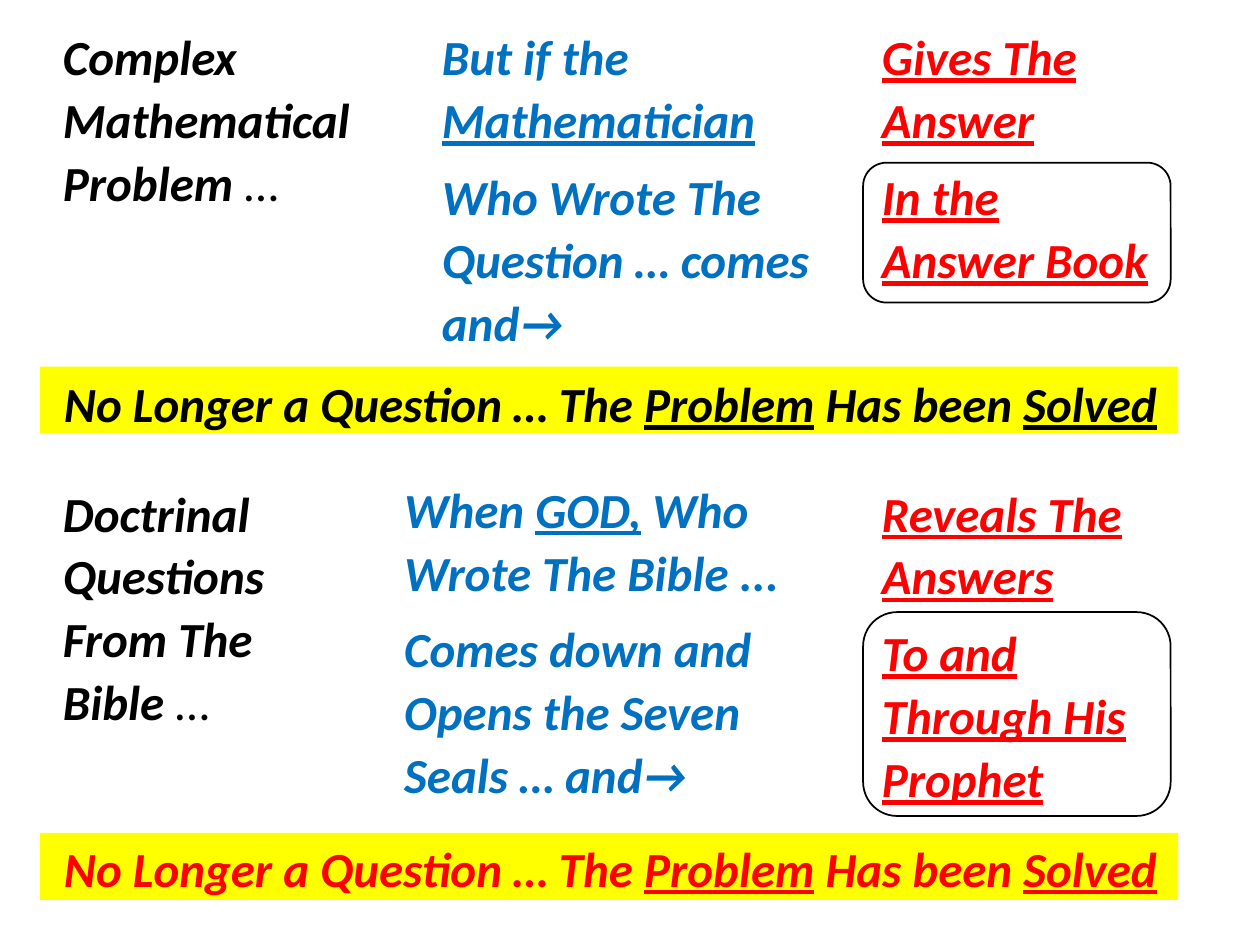
from pptx import Presentation
from pptx.dml.color import RGBColor
from pptx.enum import shapes, text
from pptx.util import Cm, Pt

BLACK = RGBColor(0, 0, 0)
RED = RGBColor(255, 0, 0)
BLUE = RGBColor(0, 112, 192)
YELLOW = RGBColor(255, 255, 0)

PLAIN, UNDERLINED, LIGHT = "plain", "underlined", "light"
SOLVED = [[("No Longer a Question … The ", PLAIN), ("Problem", UNDERLINED),
           (" Has been ", PLAIN), ("Solved", UNDERLINED)]]

BANNERS = [(7.39, 7.32, BLACK), (16.79, 16.69, RED)]
FRAMES = [(3.28, 2.82), (12.34, 4.11)]
PASSAGES = [
    ((1.02, 0.33, 6.58, 4.09), BLACK,
     [[("Complex Mathematical Problem ", PLAIN), ("…", LIGHT)]]),
    ((8.66, 0.33, 8.15, 6.93), BLUE,
     [[("But if the ", PLAIN), ("Mathematician", UNDERLINED)],
      [("Who Wrote The Question … comes and→", PLAIN)]]),
    ((17.53, 0.33, 6.12, 5.66), RED,
     [[("Gives The Answer", UNDERLINED)], [("In the Answer Book", UNDERLINED)]]),
    ((1.02, 9.53, 6.12, 5.38), BLACK,
     [[("Doctrinal Questions From The Bible ", PLAIN), ("…", LIGHT)]]),
    ((7.9, 9.45, 8.86, 6.93), BLUE,
     [[("When ", PLAIN), ("GOD,", UNDERLINED), (" Who Wrote The Bible ...", PLAIN)],
      [("Comes down and Opens the Seven Seals … and→", PLAIN)]]),
    ((17.53, 9.53, 6.12, 6.93), RED,
     [[("Reveals The Answers", UNDERLINED)],
      [("To and Through His Prophet", UNDERLINED)]]),
]


def add_block(page, kind, place):
    block = page.shapes.add_shape(kind, *map(Cm, place))
    block.shadow.inherit = False
    return block


def add_passage(page, place, color, paragraphs):
    box = page.shapes.add_textbox(*map(Cm, place))
    frame = box.text_frame
    frame.word_wrap = True
    frame.auto_size = text.MSO_AUTO_SIZE.SHAPE_TO_FIT_TEXT
    for index, spans in enumerate(paragraphs):
        para = frame.add_paragraph() if index else frame.paragraphs[0]
        para.line_spacing = 1.07
        para.space_after = Pt(8)
        para.font.name = "Calibri"
        para.font.size = Pt(28)
        para.font.color.rgb = color
        for words, style in spans:
            span = para.add_run()
            span.text = words
            span.font.name = "Calibri"
            span.font.size = Pt(28)
            span.font.color.rgb = color
            span.font.bold = span.font.italic = style != LIGHT
            span.font.underline = style == UNDERLINED


def main():
    deck = Presentation()
    deck.slide_width, deck.slide_height = Cm(25.4), Cm(19.05)
    page = deck.slides.add_slide(deck.slide_layouts[6])

    for bar_top, text_top, color in BANNERS:
        bar = add_block(page, shapes.MSO_SHAPE.RECTANGLE, (0.81, bar_top, 22.94, 1.35))
        bar.fill.solid()
        bar.fill.fore_color.rgb = YELLOW
        bar.line.fill.background()
        add_passage(page, (1.04, text_top, 24.36, 1.55), color, SOLVED)

    for place, color, paragraphs in PASSAGES:
        add_passage(page, place, color, paragraphs)

    for top, height in FRAMES:
        outline = add_block(page, shapes.MSO_SHAPE.ROUNDED_RECTANGLE,
                            (17.4, top, 6.2, height))
        outline.fill.background()
        outline.line.color.rgb = BLACK
        outline.line.width = Pt(1)

    deck.save("out.pptx")


if __name__ == "__main__":
    main()
